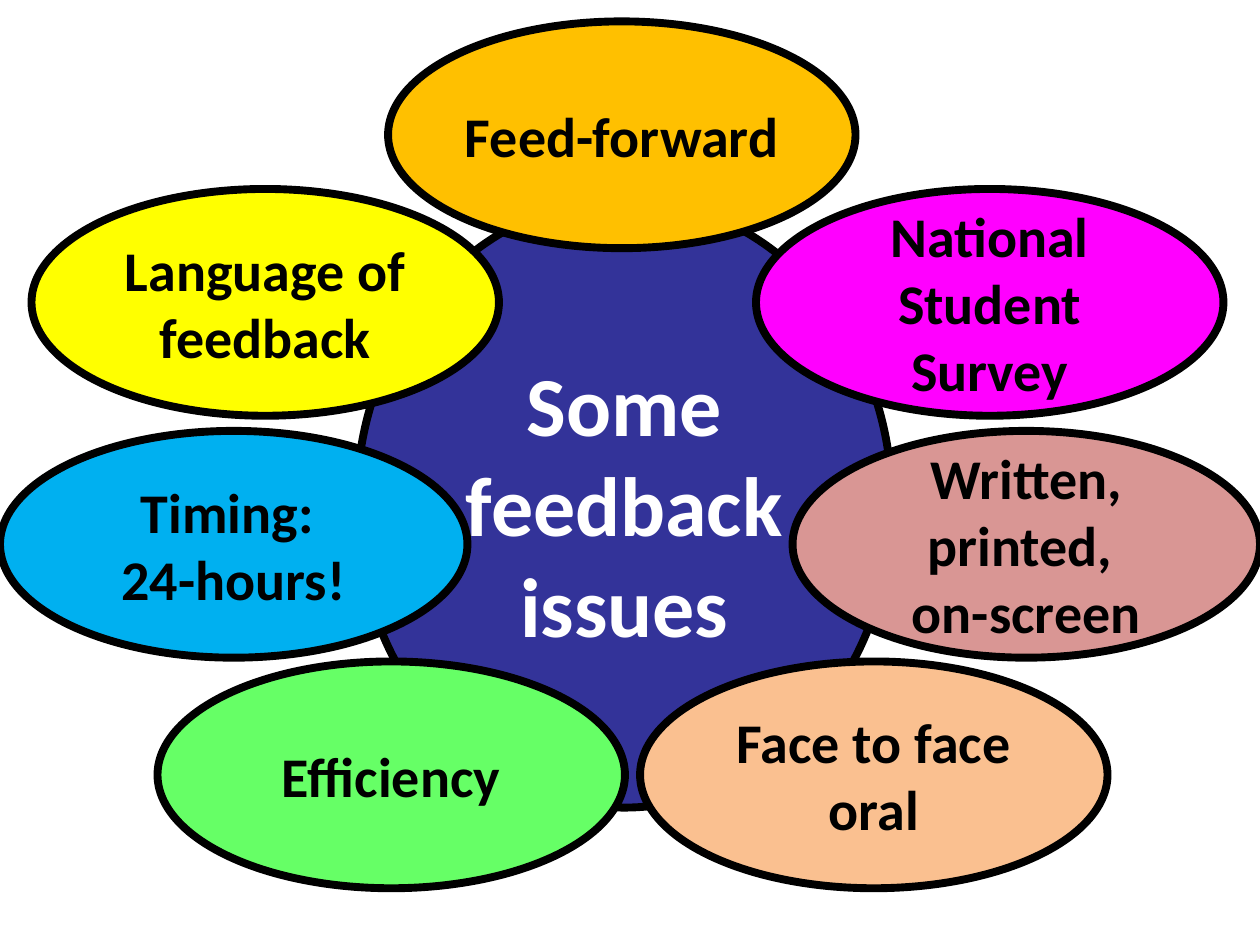
from pptx import Presentation
from pptx.dml.color import RGBColor
from pptx.enum import shapes, text
from pptx.util import Inches, Pt

BLACK = RGBColor(0x00, 0x00, 0x00)
WHITE = RGBColor(0xFF, 0xFF, 0xFF)
NAVY = RGBColor(0x33, 0x33, 0x99)
ROSE = RGBColor(0xD9, 0x96, 0x94)
YELLOW = RGBColor(0xFF, 0xFF, 0x00)
PINK = RGBColor(0xFF, 0x00, 0xFF)
BLUE = RGBColor(0x00, 0xB0, 0xF0)
GOLD = RGBColor(0xFF, 0xC0, 0x00)
GREEN = RGBColor(0x66, 0xFF, 0x66)
PEACH = RGBColor(0xFA, 0xC0, 0x90)

WIDTH, HEIGHT = 3.71, 1.8
ISSUES = [
    (6.29, 3.42, ROSE, ["Written, printed, ", "on-screen"]),
    (0.25, 1.5, YELLOW, ["Language of feedback"]),
    (6, 1.5, PINK, ["National Student Survey"]),
    (0, 3.42, BLUE, ["Timing: ", "24-hours!"]),
    (3.08, 0.17, GOLD, ["Feed-forward"]),
    (1.25, 5.25, GREEN, ["Efficiency"]),
    (5.08, 5.25, PEACH, ["Face to face", "oral"]),
]


def add_oval(slide, box, fill, lines, size, color):
    """Draw an outlined ellipse in the box with centred bold lines."""
    oval = slide.shapes.add_shape(
        shapes.MSO_SHAPE.OVAL, *[Inches(n) for n in box])
    oval.shadow.inherit = False
    oval.fill.solid()
    oval.fill.fore_color.rgb = fill
    oval.line.color.rgb = BLACK
    oval.line.width = Pt(4.5)
    frame = oval.text_frame
    frame.word_wrap = True
    frame.vertical_anchor = text.MSO_ANCHOR.MIDDLE
    for i, line in enumerate(lines):
        para = frame.add_paragraph() if i else frame.paragraphs[0]
        para.alignment = text.PP_ALIGN.CENTER
        run = para.add_run()
        run.text = line
        run.font.name = "Calibri"
        run.font.size = Pt(size)
        run.font.bold = True
        run.font.color.rgb = color
    return oval


def add_hub(slide, box):
    """Draw the central topic."""
    add_oval(slide, box, NAVY, ["Some feedback", "issues"], 48, WHITE)


def add_petal(slide, box, fill, lines):
    """Draw one issue around the hub, with no text margins."""
    frame = add_oval(slide, box, fill, lines, 32, BLACK).text_frame
    frame.margin_left = frame.margin_right = Inches(0)
    frame.margin_top = frame.margin_bottom = Inches(0)


def main():
    """Build and save the slide."""
    deck = Presentation()
    deck.slide_width, deck.slide_height = Inches(10), Inches(7.5)
    slide = deck.slides.add_slide(deck.slide_layouts[6])
    add_hub(slide, (2.83, 1.58, 4.25, 4.83))
    for left, top, fill, lines in ISSUES:
        add_petal(slide, (left, top, WIDTH, HEIGHT), fill, lines)
    deck.save("out.pptx")


if __name__ == "__main__":
    main()
